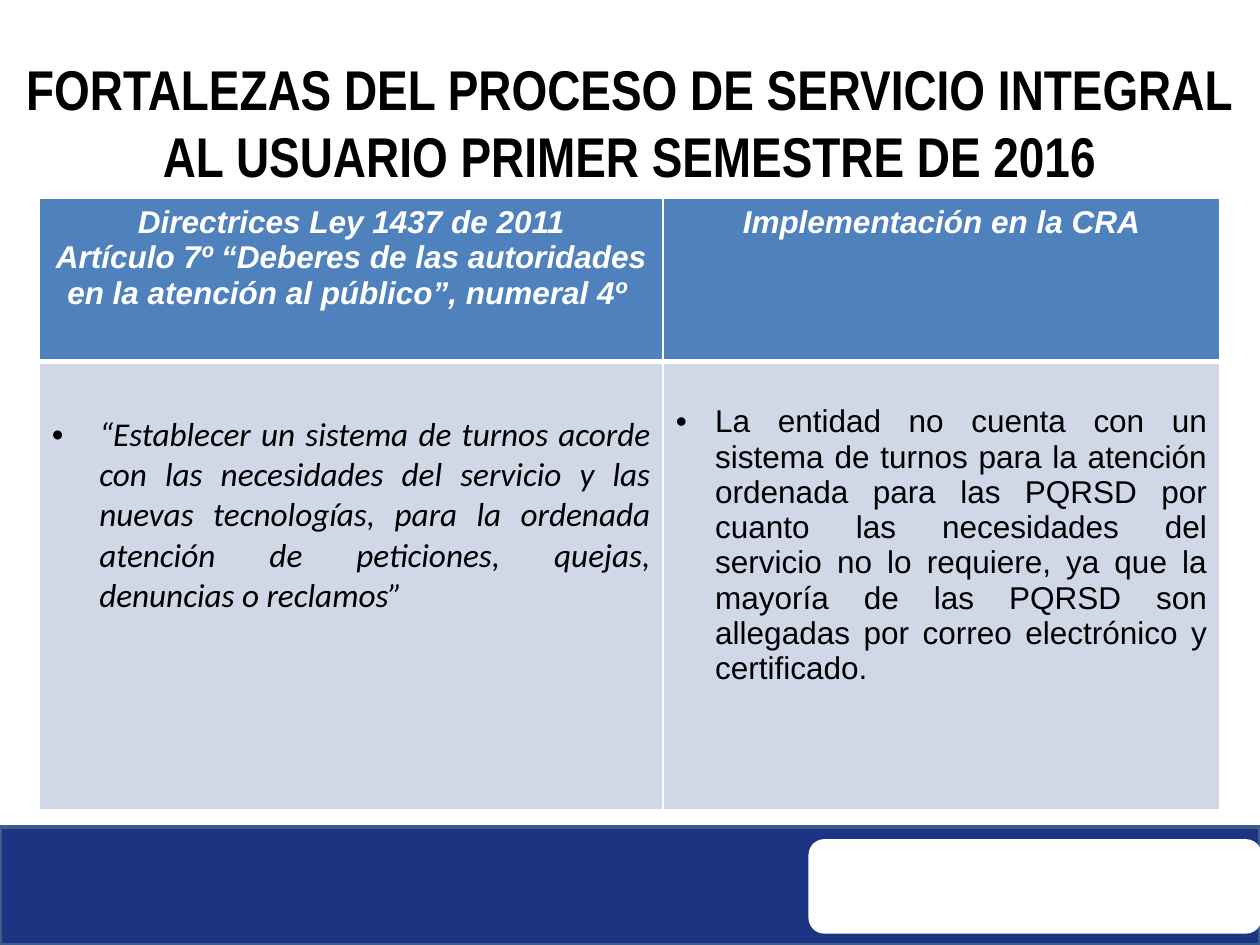
from dataclasses import dataclass
from typing import Optional

from lxml.etree import SubElement
from pptx import Presentation
from pptx.dml.color import RGBColor
from pptx.enum.shapes import MSO_SHAPE
from pptx.enum.text import PP_ALIGN
from pptx.oxml.ns import qn
from pptx.util import Pt

WHITE = RGBColor(0xFF, 0xFF, 0xFF)
BLACK = RGBColor(0x00, 0x00, 0x00)
NAVY = RGBColor(0x1C, 0x34, 0x81)
NAVY_EDGE = RGBColor(0x3A, 0x5F, 0x8C)
HEADER_BLUE = RGBColor(0x4F, 0x81, 0xBD)
BODY_BLUE = RGBColor(0xD0, 0xD8, 0xE8)

SLIDE_W, SLIDE_H = 720, 540
COLUMNS = (356.5, 318)
ROWS = (93, 256)


@dataclass
class TextStyle:
    font: str
    size: float
    color: RGBColor
    bold: bool = False
    italic: bool = False


@dataclass
class CellSpec:
    text: str
    style: TextStyle
    fill: RGBColor
    align: PP_ALIGN
    top_margin: float = 3.6
    indent: float = 0
    top_border: float = 1
    bottom_border: float = 1


@dataclass
class Panel:
    kind: MSO_SHAPE
    left: float
    top: float
    width: float
    height: float
    fill: RGBColor
    line: Optional[RGBColor] = None


HEADER = TextStyle("Arial", 18, WHITE, bold=True, italic=True)
QUOTE = TextStyle("Calibri", 19, BLACK, italic=True)
BODY = TextStyle("Arial", 18, BLACK)
TITLE = TextStyle("Arial Narrow", 32, BLACK, bold=True)

PANELS = (
    Panel(MSO_SHAPE.RECTANGLE, 0, 472.5, SLIDE_W, 67.5, NAVY, NAVY_EDGE),
    Panel(MSO_SHAPE.ROUNDED_RECTANGLE, 462, 479.5, 259, 54, WHITE),
)


def header_cell(text: str) -> CellSpec:
    return CellSpec(text, HEADER, HEADER_BLUE, PP_ALIGN.CENTER, bottom_border=3)


def body_cell(text: str, style: TextStyle, top_margin: float, indent: float) -> CellSpec:
    return CellSpec(text, style, BODY_BLUE, PP_ALIGN.JUSTIFY, top_margin, indent, top_border=3)


CELLS = (
    (
        header_cell("Directrices Ley 1437 de 2011\nArtículo 7º “Deberes de las autoridades "
                    "en la atención al público”, numeral 4º "),
        header_cell("Implementación en la CRA"),
    ),
    (
        body_cell("“Establecer un sistema de turnos acorde con las necesidades del servicio "
                  "y las nuevas tecnologías, para la ordenada atención de peticiones, quejas, "
                  "denuncias o reclamos”", QUOTE, 30.5, 27),
        body_cell("La entidad no cuenta con un sistema de turnos para la atención ordenada "
                  "para las PQRSD por cuanto las necesidades del servicio no lo requiere, ya "
                  "que la mayoría de las PQRSD son allegadas por correo electrónico y "
                  "certificado.", BODY, 24.5, 22.5),
    ),
)


def format_text(tf, style: TextStyle, align: PP_ALIGN) -> None:
    for p in tf.paragraphs:
        p.alignment = align
        for r in p.runs:
            r.font.name = style.font
            r.font.size = Pt(style.size)
            r.font.bold = style.bold
            r.font.italic = style.italic
            r.font.color.rgb = style.color


def add_bullet(p, indent: float) -> None:
    pPr = p._p.get_or_add_pPr()
    pPr.set("marL", str(Pt(indent)))
    pPr.set("indent", str(-Pt(indent)))
    SubElement(pPr, qn("a:buFont"), typeface="Arial")
    SubElement(pPr, qn("a:buChar"), char="•")


def set_borders(cell, top: float, bottom: float) -> None:
    """Draw white cell edges; must run before the cell fill is set."""
    tcPr = cell._tc.get_or_add_tcPr()
    for tag, width in (("lnL", 1), ("lnR", 1), ("lnT", top), ("lnB", bottom)):
        ln = SubElement(tcPr, qn(f"a:{tag}"), w=str(Pt(width)))
        fill = SubElement(ln, qn("a:solidFill"))
        SubElement(fill, qn("a:srgbClr"), val=str(WHITE))


def fill_cell(cell, spec: CellSpec) -> None:
    set_borders(cell, spec.top_border, spec.bottom_border)
    cell.fill.solid()
    cell.fill.fore_color.rgb = spec.fill
    cell.margin_top = Pt(spec.top_margin)
    tf = cell.text_frame
    tf.text = spec.text
    if spec.indent:
        add_bullet(tf.paragraphs[0], spec.indent)
    format_text(tf, spec.style, spec.align)


def add_panel(s, panel: Panel) -> None:
    sp = s.shapes.add_shape(panel.kind, Pt(panel.left), Pt(panel.top),
                            Pt(panel.width), Pt(panel.height))
    sp.shadow.inherit = False
    sp.fill.solid()
    sp.fill.fore_color.rgb = panel.fill
    if panel.line is None:
        sp.line.fill.background()
    else:
        sp.line.color.rgb = panel.line
        sp.line.width = Pt(2)


def add_title(s, text: str) -> None:
    tf = s.shapes.add_textbox(0, Pt(27.5), Pt(SLIDE_W), Pt(85)).text_frame
    tf.word_wrap = True
    tf.text = text
    format_text(tf, TITLE, PP_ALIGN.CENTER)


def add_comparison(s) -> None:
    table = s.shapes.add_table(len(ROWS), len(COLUMNS), Pt(22.5), Pt(113.5),
                               Pt(sum(COLUMNS)), Pt(sum(ROWS))).table
    for column, width in zip(table.columns, COLUMNS):
        column.width = Pt(width)
    for row, height, specs in zip(table.rows, ROWS, CELLS):
        row.height = Pt(height)
        for cell, spec in zip(row.cells, specs):
            fill_cell(cell, spec)


def main() -> None:
    prs = Presentation()
    prs.slide_width, prs.slide_height = Pt(SLIDE_W), Pt(SLIDE_H)
    s = prs.slides.add_slide(prs.slide_layouts[6])
    for panel in PANELS:
        add_panel(s, panel)
    add_title(s, "FORTALEZAS DEL PROCESO DE SERVICIO INTEGRAL AL USUARIO "
                 "PRIMER SEMESTRE DE 2016")
    add_comparison(s)
    prs.save("out.pptx")


if __name__ == "__main__":
    main()
